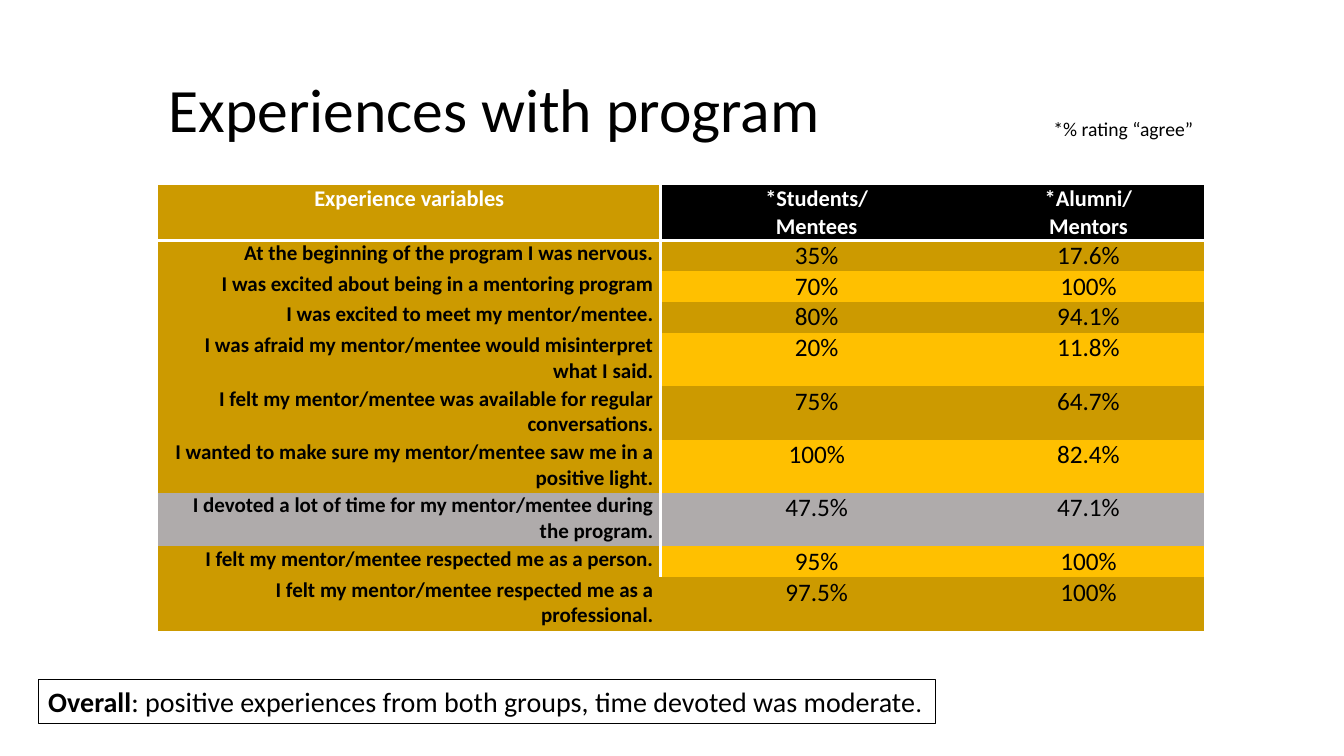
from lxml import etree
from pptx import Presentation
from pptx.dml.color import RGBColor
from pptx.enum import shapes, text
from pptx.oxml import ns
from pptx.util import Inches, Pt

FONT = "Calibri"
BLACK, WHITE = "000000", "FFFFFF"
GOLD, AMBER, GREY = "CC9A00", "FFC000", "AFABAB"
LEFT, CENTER, RIGHT = text.PP_ALIGN.LEFT, text.PP_ALIGN.CENTER, text.PP_ALIGN.RIGHT
PLAIN_TABLE_STYLE = "{2D5ABB26-0587-4C30-8999-92F81FD0307C}"

HEADINGS = ["Experience variables", "*Students/\nMentees", "*Alumni/\nMentors"]
HEADING_FILLS = [GOLD, BLACK, BLACK]
COLUMN_WIDTHS = [4.98, 3.1, 2.29]
TALL, SHORT = 0.53, 0.27
# statement, students, alumni, row height
EXPERIENCES = [
    ("At the beginning of the program I was nervous.", "35%", "17.6%", SHORT),
    ("I was excited about being in a mentoring program", "70%", "100%", SHORT),
    ("I was excited to meet my mentor/mentee.", "80%", "94.1%", SHORT),
    ("I was afraid my mentor/mentee would misinterpret what I said.", "20%", "11.8%", TALL),
    ("I felt my mentor/mentee was available for regular conversations.", "75%", "64.7%", TALL),
    ("I wanted to make sure my mentor/mentee saw me in a positive light.", "100%", "82.4%", TALL),
    ("I devoted a lot of time for my mentor/mentee during the program.", "47.5%", "47.1%", TALL),
    ("I felt my mentor/mentee respected me as a person.", "95%", "100%", SHORT),
    ("I felt my mentor/mentee respected me as a professional.", "97.5%", "100%", TALL),
]
MODERATE_ROW = 7


def rgb(value):
    return RGBColor.from_string(value)


def style(paragraph, size, color=BLACK, bold=False, align=LEFT):
    paragraph.alignment = align
    font = paragraph.font
    font.name, font.size, font.bold = FONT, Pt(size), bold
    font.color.rgb = rgb(color)


def add_borders(cell, sides):
    """Draw white 2 pt borders; sides come in schema order: R before B."""
    properties = cell._tc.get_or_add_tcPr()
    for position, side in enumerate(sides):
        line = etree.Element(ns.qn(f"a:ln{side}"), w=str(Pt(2)))
        fill = etree.SubElement(line, ns.qn("a:solidFill"))
        etree.SubElement(fill, ns.qn("a:srgbClr"), val=WHITE)
        properties.insert(position, line)


def fill_cell(cell, words, fill, borders="", **look):
    cell.margin_left = cell.margin_right = Inches(0.07)
    cell.margin_top = cell.margin_bottom = 0
    cell.text = words
    for paragraph in cell.text_frame.paragraphs:
        style(paragraph, **look)
    cell.fill.solid()
    cell.fill.fore_color.rgb = rgb(fill)
    add_borders(cell, borders)


def add_title(slide, words):
    title = slide.shapes.title
    title.left, title.top = Inches(1.57), Inches(0.39)
    title.width, title.height = Inches(11.5), Inches(1.45)
    title.text_frame.vertical_anchor = text.MSO_ANCHOR.MIDDLE
    title.text_frame.text = words
    heading = title.text_frame.paragraphs[0]
    heading.line_spacing = 0.9
    style(heading, 44)


def add_experience_table(slide):
    heights = [TALL] + [row[-1] for row in EXPERIENCES]
    frame = slide.shapes.add_table(
        len(heights), len(HEADINGS), Inches(1.57), Inches(1.84),
        Inches(sum(COLUMN_WIDTHS)), Inches(sum(heights)))
    table = frame.table
    table._tbl.tblPr.find(ns.qn("a:tableStyleId")).text = PLAIN_TABLE_STYLE
    table.horz_banding = False
    for column, width in zip(table.columns, COLUMN_WIDTHS):
        column.width = Inches(width)
    for row, height in zip(table.rows, heights):
        row.height = Inches(height)

    for column, (heading, fill) in enumerate(zip(HEADINGS, HEADING_FILLS)):
        fill_cell(table.cell(0, column), heading, fill, "B" if column else "RB",
                  size=16, color=WHITE, bold=True, align=CENTER)
    for row, (statement, *ratings, _) in enumerate(EXPERIENCES, 1):
        moderate = row == MODERATE_ROW
        band = GREY if moderate else GOLD if row % 2 else AMBER
        border = "" if row == len(EXPERIENCES) else "R"
        fill_cell(table.cell(row, 0), statement, GREY if moderate else GOLD, border,
                  size=15, bold=True, align=RIGHT)
        for column, rating in enumerate(ratings, 1):
            fill_cell(table.cell(row, column), rating, band, size=18, align=CENTER)


def add_summary(slide, lead, rest):
    box = slide.shapes.add_shape(shapes.MSO_SHAPE.RECTANGLE, Inches(0.38), Inches(6.74),
                                 Inches(8.9), Inches(0.44))
    box.shadow.inherit = False
    box.fill.solid()
    box.fill.fore_color.rgb = rgb(WHITE)
    box.line.color.rgb = rgb(BLACK)
    box.line.width = Pt(1)
    box.text_frame.word_wrap = True
    summary = box.text_frame.paragraphs[0]
    style(summary, 20)
    for words, bold in ((lead, True), (rest, False)):
        run = summary.add_run()
        run.text, run.font.bold = words, bold
    stop = summary.add_run()
    stop.text, stop.font.size = ".", Pt(18)


def add_note(slide, words):
    note = slide.shapes.add_textbox(Inches(10.35), Inches(1.11), Inches(1.6), Inches(0.34))
    note.text_frame.word_wrap = False
    note.text_frame.text = words
    style(note.text_frame.paragraphs[0], 14)


def main():
    deck = Presentation()
    deck.slide_width, deck.slide_height = Inches(13.33), Inches(7.5)
    slide = deck.slides.add_slide(deck.slide_layouts.get_by_name("Title Only"))
    add_title(slide, "Experiences with program")
    add_experience_table(slide)
    add_summary(slide, "Overall",
                ": positive experiences from both groups, time devoted was moderate")
    add_note(slide, "*% rating “agree”")
    deck.save("out.pptx")


if __name__ == "__main__":
    main()
